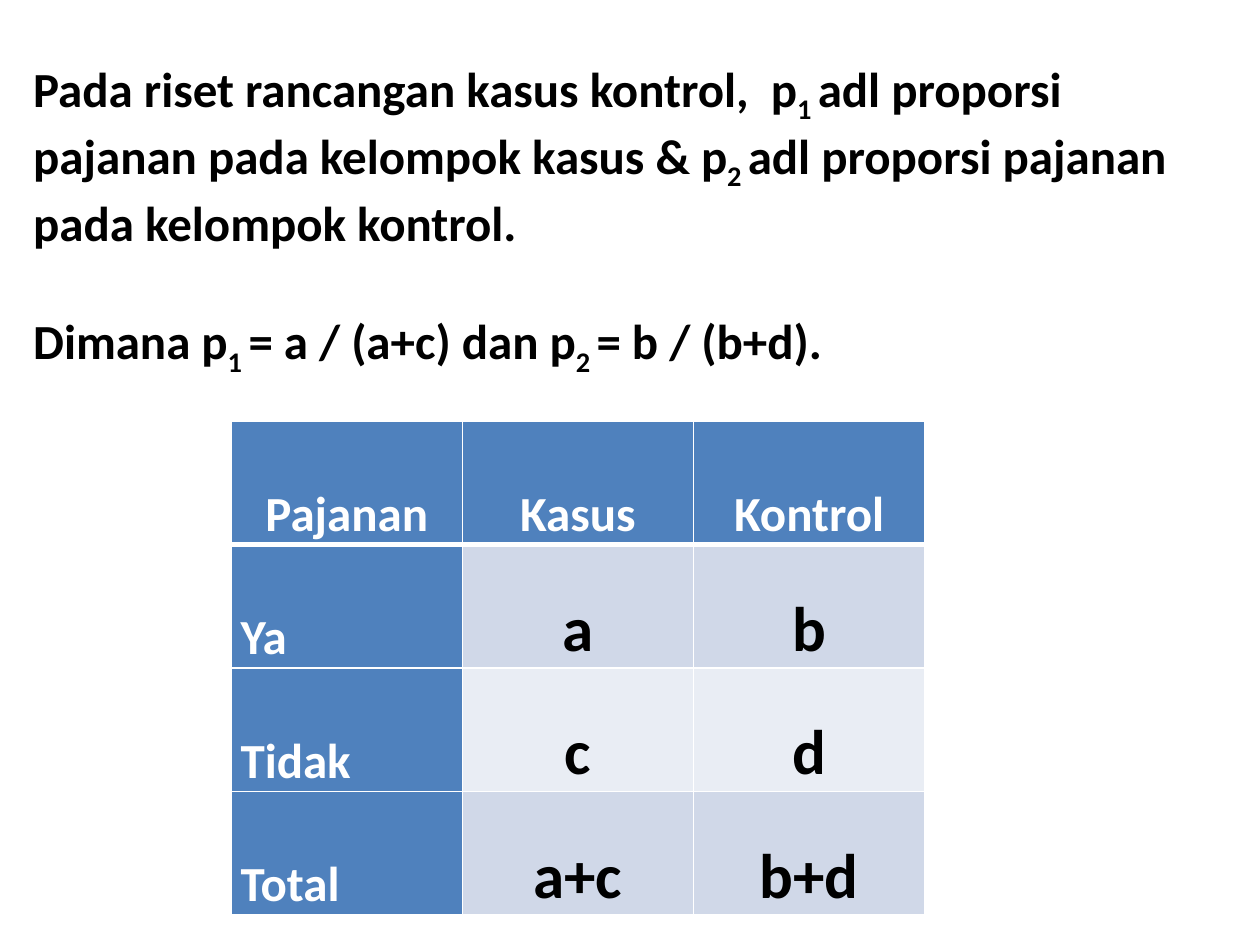
import pptx
import pptx.util
import pptx.dml.color
import pptx.enum.text
import pptx.oxml.ns
import lxml.etree
from dataclasses import dataclass

Cm, Pt = pptx.util.Cm, pptx.util.Pt
Align = pptx.enum.text.PP_ALIGN


@dataclass(frozen=True)
class Theme:
    font: str = "Calibri"
    ink: str = "000000"
    white: str = "FFFFFF"
    head: str = "4F81BD"
    bands: tuple = ("D0D8E8", "E9EDF4")
    body: int = 28
    value: int = 36
    thin: int = 1
    thick: int = 3


THEME = Theme()

# Parts of each paragraph alternate between normal text and subscript.
NOTES = [
    ["Pada riset rancangan kasus kontrol,  p", "1 ",
     "adl proporsi pajanan pada kelompok kasus & p", "2 ",
     "adl proporsi pajanan pada kelompok kontrol."],
    ["Dimana p", "1 ", "= a / (a+c) dan p", "2 ", "= b / (b+d)."],
]
ROWS = [
    ["Pajanan", "Kasus", "Kontrol"],
    ["Ya", "a", "b"],
    ["Tidak", "c", "d"],
    ["Total", "a+c", "b+d"],
]
NOTE_BOX = (Cm(0.42), Cm(1.06), Cm(24.56), Cm(7.44))
GRID_LEFT, GRID_TOP = Cm(4.66), Cm(8.49)
COL, ROW = Cm(4.66), Cm(2.49)


def style(run, size, color):
    font = run.font
    font.name, font.size, font.bold = THEME.font, Pt(size), True
    font.color.rgb = pptx.dml.color.RGBColor.from_string(color)


def add_notes(slide):
    frame = slide.shapes.add_textbox(*NOTE_BOX).text_frame
    frame.word_wrap = True
    for i, parts in enumerate(NOTES):
        para = frame.add_paragraph() if i else frame.paragraphs[0]
        if i:
            para.space_before = Pt(34)
        for j, text in enumerate(parts):
            run = para.add_run()
            run.text = text
            style(run, THEME.body, THEME.ink)
            if j % 2:
                run.font._element.set("baseline", "-25000")


def add_edges(cell, widths):
    """Draw white borders, given as a dict of side (L, R, T, B) to points."""
    props = cell._tc.get_or_add_tcPr()
    qn = pptx.oxml.ns.qn
    for side, width in widths.items():
        line = lxml.etree.SubElement(props, qn(f"a:ln{side}"), w=str(Pt(width)))
        fill = lxml.etree.SubElement(line, qn("a:solidFill"))
        lxml.etree.SubElement(fill, qn("a:srgbClr"), val=THEME.white)


def fill_cell(cell, text, r, c):
    label = r == 0 or c == 0
    thin, thick = THEME.thin, THEME.thick
    add_edges(cell, {"L": thin, "R": thin,
                     "T": thick if r == 1 else thin,
                     "B": thick if r == 0 else thin})
    color = THEME.head if label else THEME.bands[(r - 1) % 2]
    cell.fill.solid()
    cell.fill.fore_color.rgb = pptx.dml.color.RGBColor.from_string(color)
    cell.vertical_anchor = pptx.enum.text.MSO_ANCHOR.BOTTOM
    cell.margin_left = cell.margin_right = Cm(0.19)
    cell.margin_top = cell.margin_bottom = 0
    para = cell.text_frame.paragraphs[0]
    para.text = text
    para.line_spacing = 1.15
    para.alignment = Align.LEFT if c == 0 and r else Align.CENTER
    style(para.runs[0], THEME.body if label else THEME.value,
          THEME.white if label else THEME.ink)


def add_grid(slide):
    rows, cols = len(ROWS), len(ROWS[0])
    table = slide.shapes.add_table(rows, cols, GRID_LEFT, GRID_TOP,
                                   COL * cols, ROW * rows).table
    table.first_col = True
    for r, row in enumerate(ROWS):
        for c, text in enumerate(row):
            fill_cell(table.cell(r, c), text, r, c)


def main():
    deck = pptx.Presentation()
    deck.slide_width, deck.slide_height = Cm(25.4), Cm(19.05)
    slide = deck.slides.add_slide(deck.slide_layouts[6])
    add_notes(slide)
    add_grid(slide)
    deck.save("out.pptx")


if __name__ == "__main__":
    main()
